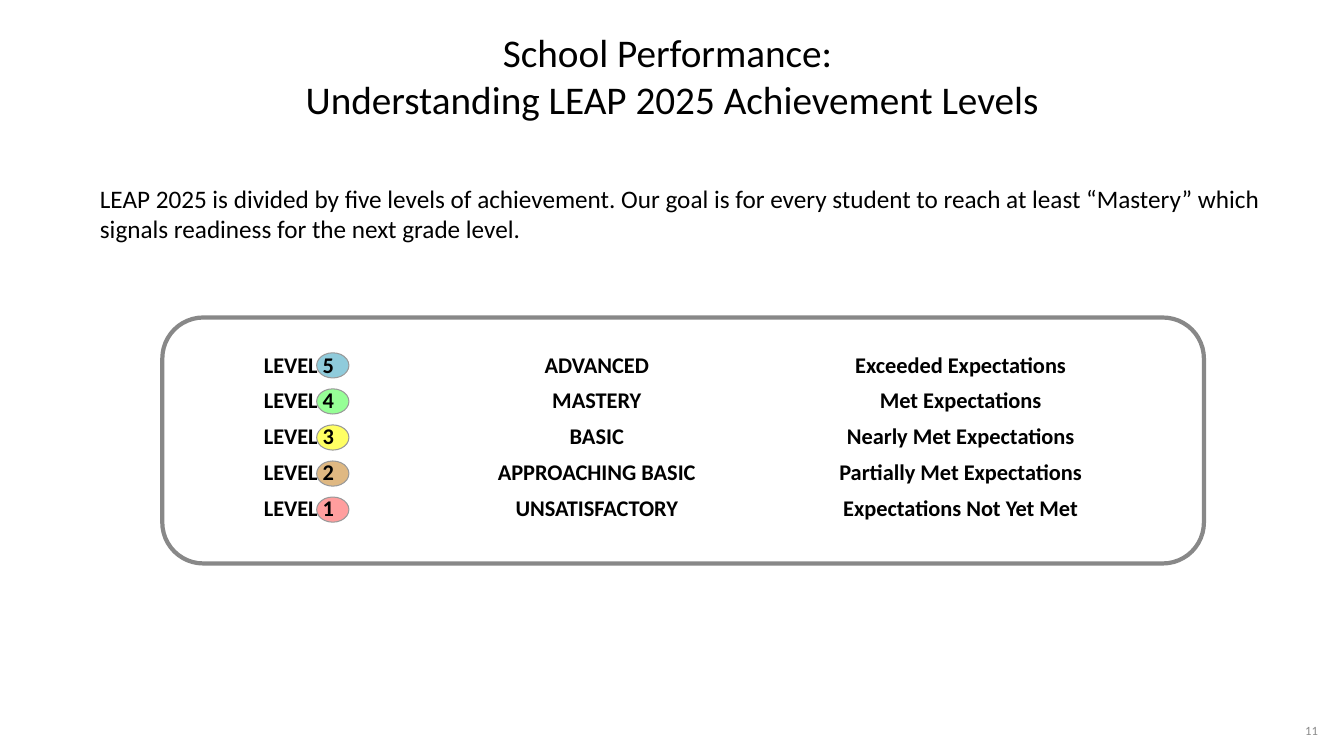
import pptx
import pptx.dml.color
import pptx.enum.shapes
import pptx.enum.text
import pptx.oxml
import pptx.oxml.ns
import pptx.util

RGBColor = pptx.dml.color.RGBColor
Align = pptx.enum.text.PP_ALIGN
Anchor = pptx.enum.text.MSO_ANCHOR
Shape = pptx.enum.shapes.MSO_SHAPE
qn = pptx.oxml.ns.qn

BLACK = RGBColor(0x00, 0x00, 0x00)
WHITE = RGBColor(0xFF, 0xFF, 0xFF)
PANEL_GRAY = RGBColor(0x88, 0x88, 0x88)
MARKER_GRAY = RGBColor(0x99, 0x99, 0x99)
NUMBER_GRAY = RGBColor(0x8A, 0x8A, 0x8A)
BLUE = RGBColor(0x4B, 0xAC, 0xC6)
GREEN = RGBColor(0x00, 0xFF, 0x00)
YELLOW = RGBColor(0xFF, 0xFF, 0x00)
BROWN = RGBColor(0xBF, 0x6F, 0x02)
RED = RGBColor(0xFF, 0x00, 0x00)

PLAIN_TABLE_STYLE = "{2D5ABB26-0587-4C30-8999-92F81FD0307C}"

# Level number, name, meaning, marker colour, marker opacity in percent
LEVELS = [
    (5, "ADVANCED", "Exceeded Expectations", BLUE, 62),
    (4, "MASTERY", "Met Expectations", GREEN, 41),
    (3, "BASIC", "Nearly Met Expectations", YELLOW, 61),
    (2, "APPROACHING BASIC", "Partially Met Expectations", BROWN, 49),
    (1, "UNSATISFACTORY", "Expectations Not Yet Met", RED, 38),
]


class SlideBuilder:
    """Places elements by percent of the slide's width and height."""

    font_name = "Calibri"
    inset = pptx.util.Inches(0.1)

    def __init__(self, presentation, slide):
        self.slide = slide
        self.width = presentation.slide_width
        self.height = presentation.slide_height

    def across(self, percent):
        return round(self.width * percent / 100)

    def down(self, percent):
        return round(self.height * percent / 100)

    def box(self, left, top, width, height):
        return self.across(left), self.down(top), self.across(width), self.down(height)

    def set_text(self, frame, text, size, color=BLACK, align=Align.LEFT, bold=False, gap=0):
        frame.text = text
        for index, paragraph in enumerate(frame.paragraphs):
            paragraph.alignment = align
            paragraph.space_before = pptx.util.Pt(gap if index else 0)
            paragraph.font.name = self.font_name
            paragraph.font.size = pptx.util.Pt(size)
            paragraph.font.bold = bold
            paragraph.font.color.rgb = color

    def set_frame(self, frame, anchor):
        frame.word_wrap = True
        frame.auto_size = pptx.enum.text.MSO_AUTO_SIZE.NONE
        frame.vertical_anchor = anchor
        frame.margin_left = frame.margin_right = self.inset
        frame.margin_top = frame.margin_bottom = self.inset

    def placeholder(self, index, area, text, size, anchor, align):
        shape = self.slide.placeholders[index]
        shape.left, shape.top, shape.width, shape.height = self.box(*area)
        self.set_frame(shape.text_frame, anchor)
        self.set_text(shape.text_frame, text, size, align=align)
        return shape

    def body(self, area, text, size):
        shape = self.placeholder(1, area, text, size, Anchor.TOP, Align.LEFT)
        for paragraph in shape.text_frame.paragraphs:
            properties = paragraph._p.get_or_add_pPr()
            properties.set("marL", "0")
            properties.set("indent", "0")
            # The bullet setting has to come before the font settings
            bullet = pptx.oxml.parse_xml(f"<a:buNone {pptx.oxml.ns.nsdecls('a')}/>")
            properties.find(qn("a:defRPr")).addprevious(bullet)

    def label(self, area, text, size, color, align):
        shape = self.slide.shapes.add_textbox(*self.box(*area))
        self.set_frame(shape.text_frame, Anchor.MIDDLE)
        self.set_text(shape.text_frame, text, size, color, align)

    def shape(self, kind, area, fill, line, line_width, opacity=100):
        shape = self.slide.shapes.add_shape(kind, *self.box(*area))
        shape.shadow.inherit = False
        shape.fill.solid()
        shape.fill.fore_color.rgb = fill
        shape.line.color.rgb = line
        shape.line.width = pptx.util.Pt(line_width)
        if opacity < 100:
            color = shape.fill._xPr.find(f"{qn('a:solidFill')}/{qn('a:srgbClr')}")
            color.append(pptx.oxml.parse_xml(
                f"<a:alpha {pptx.oxml.ns.nsdecls('a')} val='{opacity * 1000}'/>"))

    def table(self, left, top, height, column_widths, texts, size, gap):
        area = self.box(left, top, sum(column_widths), height)
        table = self.slide.shapes.add_table(1, len(texts), *area).table
        table.first_row = table.horz_banding = False
        table._tbl.tblPr.find(qn("a:tableStyleId")).text = PLAIN_TABLE_STYLE
        for column, width, cell, text in zip(
                table.columns, column_widths, table.rows[0].cells, texts):
            column.width = self.across(width)
            cell.fill.background()
            cell.margin_left = cell.margin_right = self.inset
            cell.margin_top = cell.margin_bottom = self.inset
            self.set_text(cell.text_frame, text, size, align=Align.CENTER, bold=True, gap=gap)
        return table


def main():
    presentation = pptx.Presentation()
    presentation.slide_width = pptx.util.Inches(13.33)
    presentation.slide_height = pptx.util.Inches(7.5)
    slide = presentation.slides.add_slide(presentation.slide_layouts[1])
    builder = SlideBuilder(presentation, slide)

    # Title and introduction
    builder.placeholder(
        0, (0, -0.27, 100, 20.4),
        "School Performance: \nUnderstanding LEAP 2025 Achievement Levels",
        28, Anchor.MIDDLE, Align.CENTER)
    builder.body(
        (6.68, 22.93, 88.37, 14.67),
        "LEAP 2025 is divided by five levels of achievement. Our goal is for every "
        "student to reach at least “Mastery” which signals readiness for the next "
        "grade level.", 18)

    # Slide number
    builder.label((74.4, 93.33, 24.4, 6.67), "11", 9, NUMBER_GRAY, Align.RIGHT)

    # Panel with one coloured marker per level
    builder.shape(Shape.ROUNDED_RECTANGLE, (12.08, 42, 77.5, 32.53), WHITE, PANEL_GRAY, 3)
    for row, (_, _, _, color, opacity) in enumerate(LEVELS):
        builder.shape(Shape.OVAL, (23.56, 46.67 + 4.77 * row, 2.4, 3.33),
                      color, MARKER_GRAY, 0.75, opacity)

    # Level descriptions over the markers
    numbers, names, meanings, _, _ = zip(*LEVELS)
    columns = [[f"LEVEL {number}" for number in numbers], names, meanings]
    table = builder.table(10.88, 45.2, 24.93, [22.35, 22.35, 31.8],
                          ["\n".join(column) for column in columns], 16, 6)
    # Move the level numbers towards the centre of their markers
    table.cell(0, 0).margin_left = pptx.util.Inches(0.15)

    presentation.save("out.pptx")


if __name__ == "__main__":
    main()
